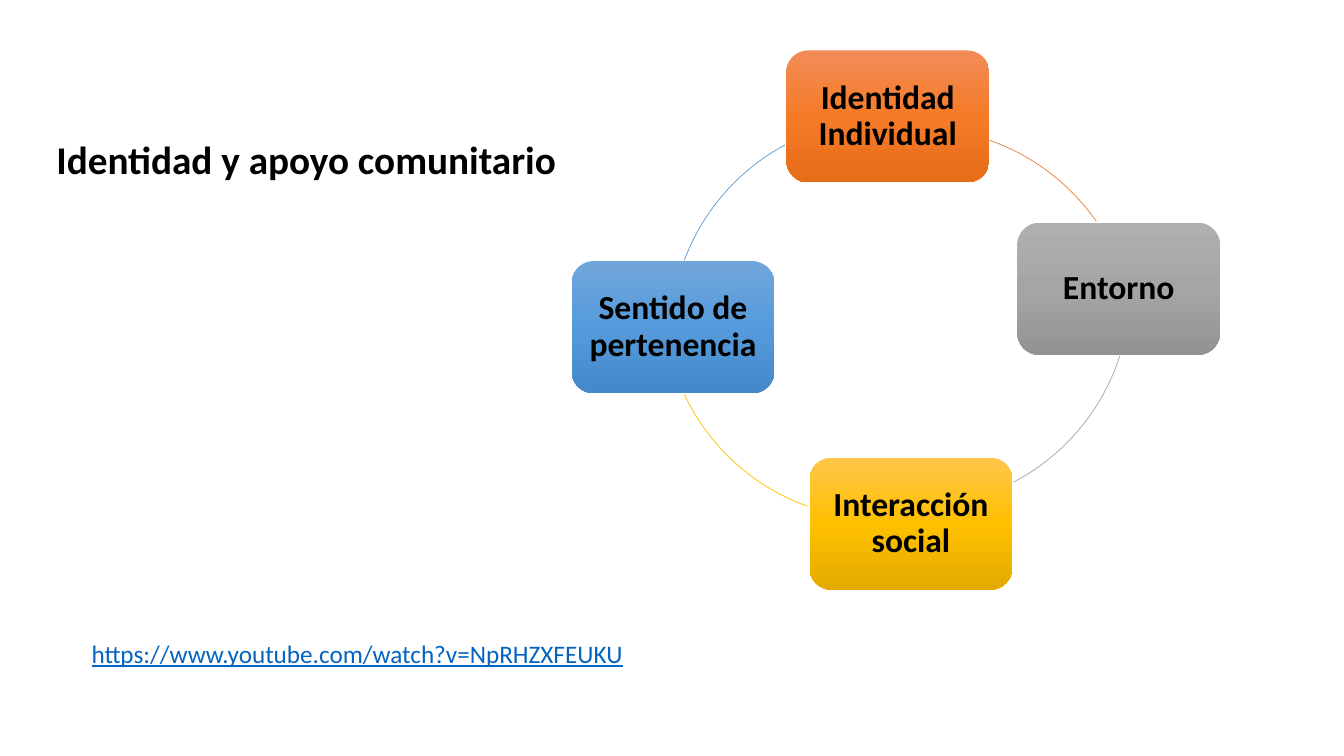
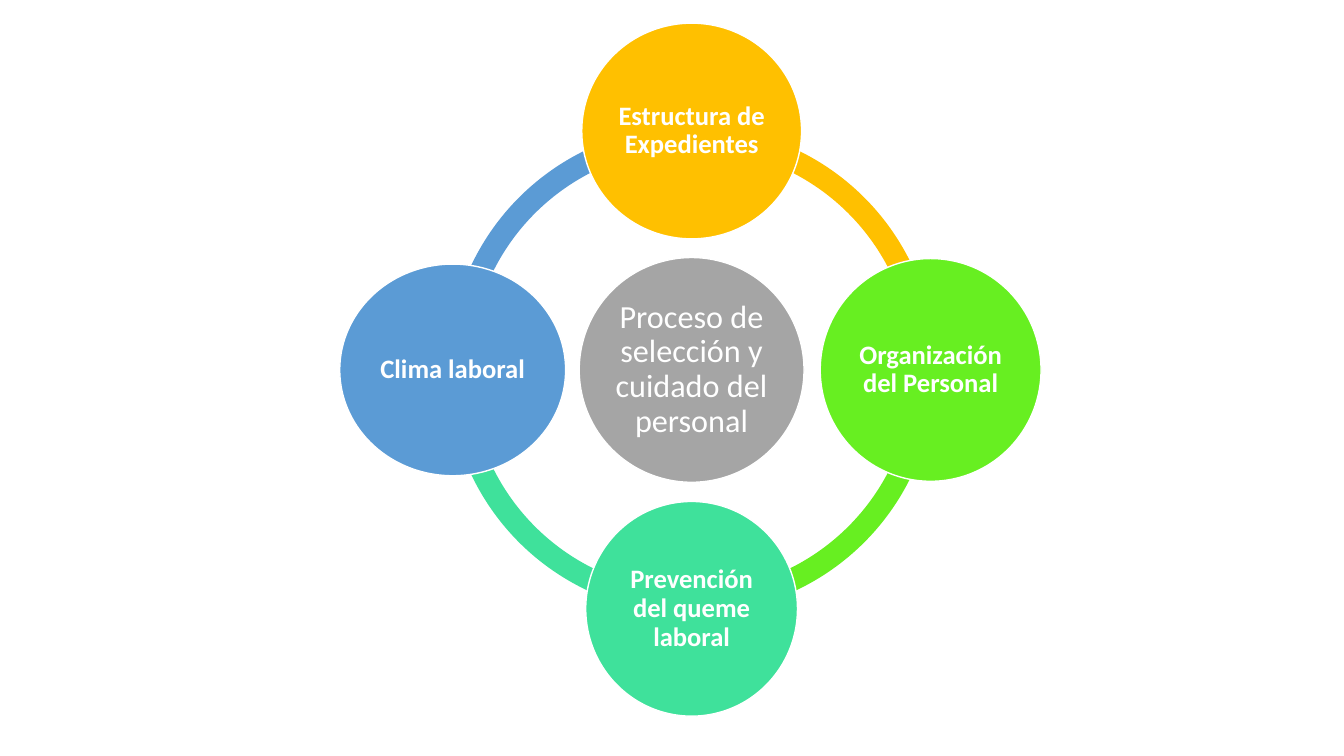
from copy import deepcopy

from pptx import Presentation
from pptx.dml.color import RGBColor
from pptx.enum.shapes import MSO_SHAPE
from pptx.enum.text import MSO_ANCHOR, MSO_AUTO_SIZE, PP_ALIGN
from pptx.oxml.ns import qn
from pptx.util import Inches, Pt

ARC, BLOCK_ARC = MSO_SHAPE.ARC, MSO_SHAPE.BLOCK_ARC
OVAL, ROUNDED = MSO_SHAPE.OVAL, MSO_SHAPE.ROUNDED_RECTANGLE
LEFT, CENTER = PP_ALIGN.LEFT, PP_ALIGN.CENTER
MIDDLE, TOP = MSO_ANCHOR.MIDDLE, MSO_ANCHOR.TOP
NO_AUTOFIT = MSO_AUTO_SIZE.NONE
TITLE_ONLY, BLANK = 5, 6

COLORS = {
    "black": "000000", "white": "FFFFFF", "url": "0563C1",
    "orange": "ED7D31", "gray": "A5A5A5", "gold": "FFC000",
    "blue": "5B9BD5", "green": "67EF21", "mint": "3FE19B",
}
# Top, middle and bottom shade of each gradient
GRADIENTS = {
    "orange": ("F18C57", "F67B28", "E56C19"),
    "gray": ("AFAFAF", "A5A5A5", "939393"),
    "gold": ("FFC64B", "FFC000", "E3AB00"),
    "blue": ("71A6DB", "559BDB", "448ACA"),
}


def rgb(name):
    return RGBColor.from_string(COLORS[name])


class Deck:
    FONT = "Calibri"
    ANGLE_UNIT = 0.6  # one degree, as an adjustment value

    def __init__(self):
        self.prs = Presentation()
        self.prs.slide_width, self.prs.slide_height = Inches(13.33), Inches(7.5)
        self.slide = None

    def new_slide(self, layout):
        self.slide = self.prs.slides.add_slide(self.prs.slide_layouts[layout])

    def add_text(self, shape, text, size, color, bold=False, underline=False,
                 align=CENTER, anchor=MIDDLE, inset=0.1, spacing=0.9):
        frame = shape.text_frame
        frame.word_wrap, frame.auto_size = True, NO_AUTOFIT
        frame.vertical_anchor = anchor
        frame.margin_left = frame.margin_right = Inches(inset)
        frame.margin_top = frame.margin_bottom = Inches(min(inset, 0.05))
        paragraph = frame.paragraphs[0]
        paragraph.alignment, paragraph.line_spacing = align, spacing
        run = paragraph.add_run()
        run.text = text
        font = run.font
        font.name, font.size, font.color.rgb = self.FONT, Pt(size), rgb(color)
        font.bold, font.underline = bold, underline

    def title(self, text, left, top, width, height):
        title = self.slide.shapes.title
        title.left, title.top = Inches(left), Inches(top)
        title.width, title.height = Inches(width), Inches(height)
        self.add_text(title, text, 28, "black", bold=True, align=LEFT)

    def web_address(self, text, left, top, width, height):
        box = self.slide.shapes.add_textbox(
            Inches(left), Inches(top), Inches(width), Inches(height))
        self.add_text(box, text, 18, "url", underline=True, align=LEFT,
                      anchor=TOP, spacing=1.0)

    def shape(self, kind, left, top, width, height):
        shape = self.slide.shapes.add_shape(
            kind, Inches(left), Inches(top), Inches(width), Inches(height))
        shape.shadow.inherit = False
        shape.line.fill.background()
        return shape

    def card(self, text, color, left, top):
        card = self.shape(ROUNDED, left, top, 2.01, 1.31)
        fill = card.fill
        fill.gradient()
        fill.gradient_angle = 270
        stop_list = card.element.spPr.find(".//" + qn("a:gsLst"))
        stop_list.append(deepcopy(stop_list[0]))
        for i, (stop, shade) in enumerate(zip(fill.gradient_stops, GRADIENTS[color])):
            stop.position, stop.color.rgb = i / 2, RGBColor.from_string(shade)
        self.add_text(card, text, 24, "black", bold=True)

    def arc(self, color, left, top, diameter, start, end):
        arc = self.shape(ARC, left, top, diameter, diameter)
        arc.adjustments[0] = start * self.ANGLE_UNIT
        arc.adjustments[1] = end * self.ANGLE_UNIT
        arc.fill.background()
        arc.line.color.rgb, arc.line.width = rgb(color), Pt(0.5)

    def ring_quarter(self, color, left, top, diameter, start):
        quarter = self.shape(BLOCK_ARC, left, top, diameter, diameter)
        quarter.adjustments[0] = start * self.ANGLE_UNIT
        quarter.adjustments[1] = (start + 90) % 360 * self.ANGLE_UNIT
        quarter.adjustments[2] = 0.046
        quarter.fill.solid()
        quarter.fill.fore_color.rgb = rgb(color)

    def circle(self, text, color, center, width, height, size=19, bold=True):
        x, y = center
        circle = self.shape(OVAL, x - width / 2, y - height / 2, width, height)
        circle.fill.solid()
        circle.fill.fore_color.rgb = rgb(color)
        circle.line.color.rgb, circle.line.width = rgb("white"), Pt(1)
        self.add_text(circle, text, size, "white", bold=bold, inset=0.03)


def community_slide(deck):
    deck.new_slide(TITLE_ONLY)
    # Cycle: each card, then the arc that leaves it (left, top, start, end)
    cycle = [
        ("Identidad Individual", "orange", (7.8, 0.5), (6.94, 1.27, 289.4, 325.2)),
        ("Entorno", "gray", (10.09, 2.21), (6.89, 0.71, 17.8, 62.4)),
        ("Interacción social", "gold", (8.03, 4.54), (6.58, 0.83, 109.8, 154.7)),
        ("Sentido de pertenencia", "blue", (5.67, 2.59), (6.65, 1.18, 200.6, 241.7)),
    ]
    for text, color, corner, (left, top, start, end) in cycle:
        deck.card(text, color, *corner)
        deck.arc(color, left, top, 4.32, start, end)
    # Title and source
    deck.title("Identidad y apoyo comunitario", 0.46, 1.21, 10, 0.79)
    deck.web_address("https://www.youtube.com/watch?v=NpRHZXFEUKU",
                     0.81, 6.28, 7.33, 0.4)


def staff_slide(deck):
    deck.new_slide(BLANK)
    x, y, ring, reach = 6.86, 3.67, 4.84, 2.37
    # Ring
    for color, start in (("blue", 180), ("mint", 90), ("green", 0), ("gold", 270)):
        deck.ring_quarter(color, x - ring / 2, y - ring / 2, ring, start)
    # Core topic
    deck.circle("Proceso de selección y cuidado del personal", "gray",
                (x, y), 2.23, 2.23, size=23, bold=False)
    # Topics around it: direction from the core, then width and height
    topics = [
        ("Estructura de Expedientes", "gold", (0, -1), 2.18, 2.14),
        ("Organización del Personal", "green", (1, 0), 2.19, 2.21),
        ("Prevención del queme laboral", "mint", (0, 1), 2.1, 2.13),
        ("Clima laboral", "blue", (-1, 0), 2.24, 2.1),
    ]
    for text, color, (dx, dy), width, height in topics:
        deck.circle(text, color, (x + dx * reach, y + dy * reach), width, height)


def main():
    deck = Deck()
    community_slide(deck)
    staff_slide(deck)
    deck.prs.save("out.pptx")


if __name__ == "__main__":
    main()
